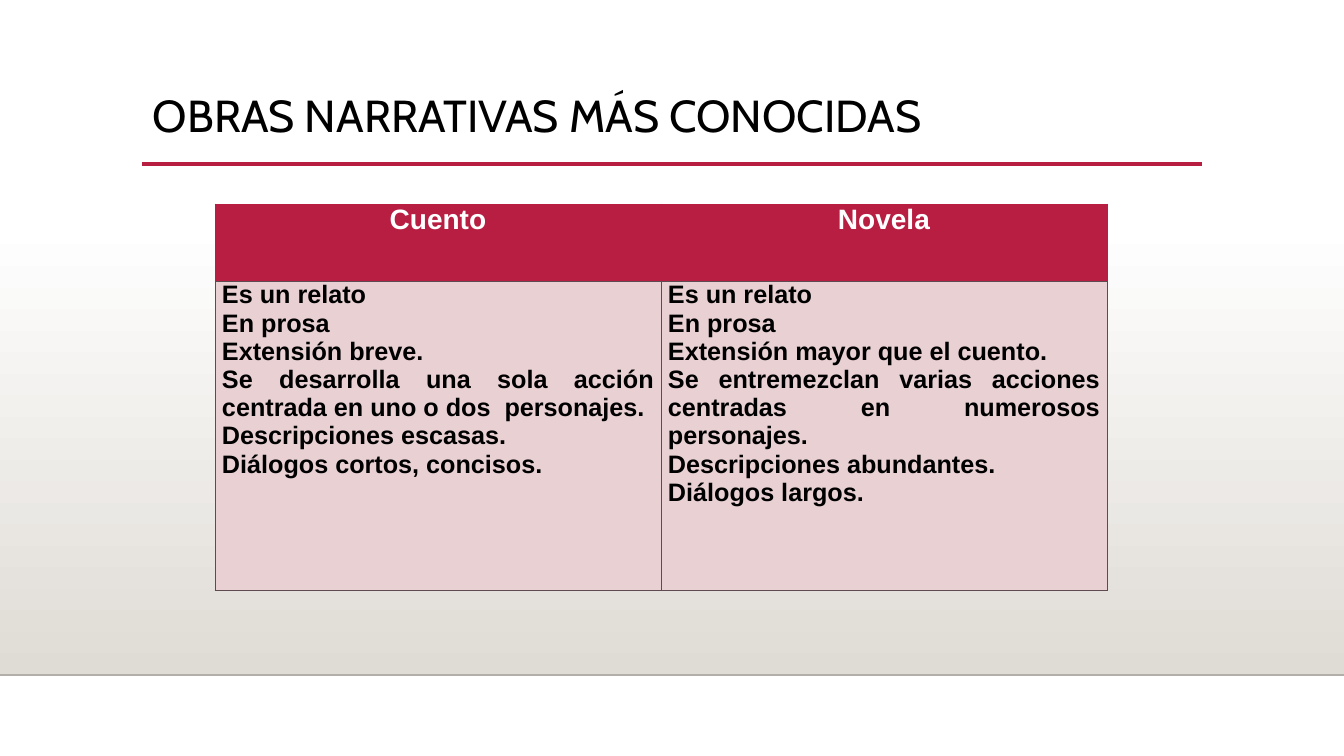
from lxml import etree
from pptx import Presentation
from pptx.dml.color import RGBColor
from pptx.enum.shapes import MSO_CONNECTOR, MSO_SHAPE
from pptx.enum.text import MSO_ANCHOR, PP_ALIGN
from pptx.oxml.ns import qn
from pptx.util import Pt

STRAIGHT = MSO_CONNECTOR.STRAIGHT
RECTANGLE = MSO_SHAPE.RECTANGLE
TOP = MSO_ANCHOR.TOP
CENTER, JUSTIFY = PP_ALIGN.CENTER, PP_ALIGN.JUSTIFY

COLORS = {
    "white": "FFFFFF",
    "black": "000000",
    "crimson": "B71E42",
    "blush": "E8D0D3",
    "grid": "5E4A50",
    "stone": "DFDBD5",
    "floor": "B2AFAA",
}

GENRES = {
    "Cuento": [
        "Es un relato",
        "En prosa",
        "Extensión breve.",
        "Se desarrolla una sola acción centrada en uno o dos  personajes.",
        "Descripciones escasas.",
        "Diálogos cortos, concisos.",
    ],
    "Novela": [
        "Es un relato",
        "En prosa",
        "Extensión mayor que el cuento.",
        "Se entremezclan varias acciones centradas en numerosos personajes.",
        "Descripciones abundantes.",
        "Diálogos largos.",
    ],
}


def px(length):
    return round(length * 914400 / 100.8)


def rgb(name):
    return RGBColor.from_string(COLORS[name])


def set_font(paragraph, family, size, color, bold=False):
    font = paragraph.font
    font.name, font.size, font.bold = family, Pt(size), bold
    font.color.rgb = rgb(color)


def add_rule(slide, left, top, width, color, weight):
    rule = slide.shapes.add_connector(
        STRAIGHT, px(left), px(top), px(left + width), px(top))
    rule.line.color.rgb = rgb(color)
    rule.line.width = Pt(weight)
    etree.SubElement(rule._element.spPr, qn("a:effectLst"))


def add_backdrop(slide, left, top, width, height):
    # Fade from white down to stone, closed by a thin floor line
    fade = slide.shapes.add_shape(
        RECTANGLE, px(left), px(top), px(width), px(height))
    fade.shadow.inherit = False
    fade.line.fill.background()
    fade.fill.gradient()
    fade.fill.gradient_angle = 270
    for stop, color in zip(fade.fill.gradient_stops, ("white", "stone")):
        stop.color.rgb = rgb(color)
    add_rule(slide, left, top + height, width, "floor", 1)


def add_heading(slide, left, top, width, height):
    heading = slide.shapes.add_textbox(px(left), px(top), px(width), px(height))
    frame = heading.text_frame
    frame.word_wrap = True
    frame.vertical_anchor = TOP
    title = frame.paragraphs[0]
    title.text = "OBRAS NARRATIVAS MÁS CONOCIDAS"
    title.line_spacing = 0.9
    set_font(title, "Cabin", 32, "black")
    # Underline across the heading
    add_rule(slide, left - 1, top + 75, width + 2, "crimson", 2.5)


def style_cell(cell, fill, border):
    cell.margin_left = cell.margin_right = px(7)
    cell.margin_top = cell.margin_bottom = 0
    cell.vertical_anchor = TOP
    properties = cell._tc.get_or_add_tcPr()
    for side in ("a:lnL", "a:lnR", "a:lnT", "a:lnB"):
        edge = etree.SubElement(properties, qn(side), w=str(Pt(0.75)))
        solid = etree.SubElement(edge, qn("a:solidFill"))
        etree.SubElement(solid, qn("a:srgbClr"), val=COLORS[border])
    cell.fill.solid()
    cell.fill.fore_color.rgb = rgb(fill)


def write_cell(cell, lines, align, size, color):
    cell.text = "\n".join(lines)
    for paragraph in cell.text_frame.paragraphs:
        paragraph.alignment = align
        set_font(paragraph, "Arial", size, color, bold=True)


def add_comparison(slide, left, top, width, height):
    header_height = 77
    comparison = slide.shapes.add_table(
        2, len(GENRES), px(left), px(top), px(width), px(height)).table
    comparison.rows[0].height = px(header_height)
    comparison.rows[1].height = px(height - header_height)
    for column, (genre, traits) in enumerate(GENRES.items()):
        comparison.columns[column].width = px(width // len(GENRES))
        header, body = comparison.cell(0, column), comparison.cell(1, column)
        style_cell(header, "crimson", "crimson")
        write_cell(header, [genre], CENTER, 20, "white")
        style_cell(body, "blush", "grid")
        write_cell(body, traits, JUSTIFY, 18, "black")


def main():
    deck = Presentation()
    deck.slide_width, deck.slide_height = px(1344), px(756)
    slide = deck.slides.add_slide(deck.slide_layouts[6])
    add_backdrop(slide, 0, 223, 1344, 452)
    add_heading(slide, 143, 89, 1058, 116)
    add_comparison(slide, 215, 204, 892, 387)
    deck.save("out.pptx")


if __name__ == "__main__":
    main()
